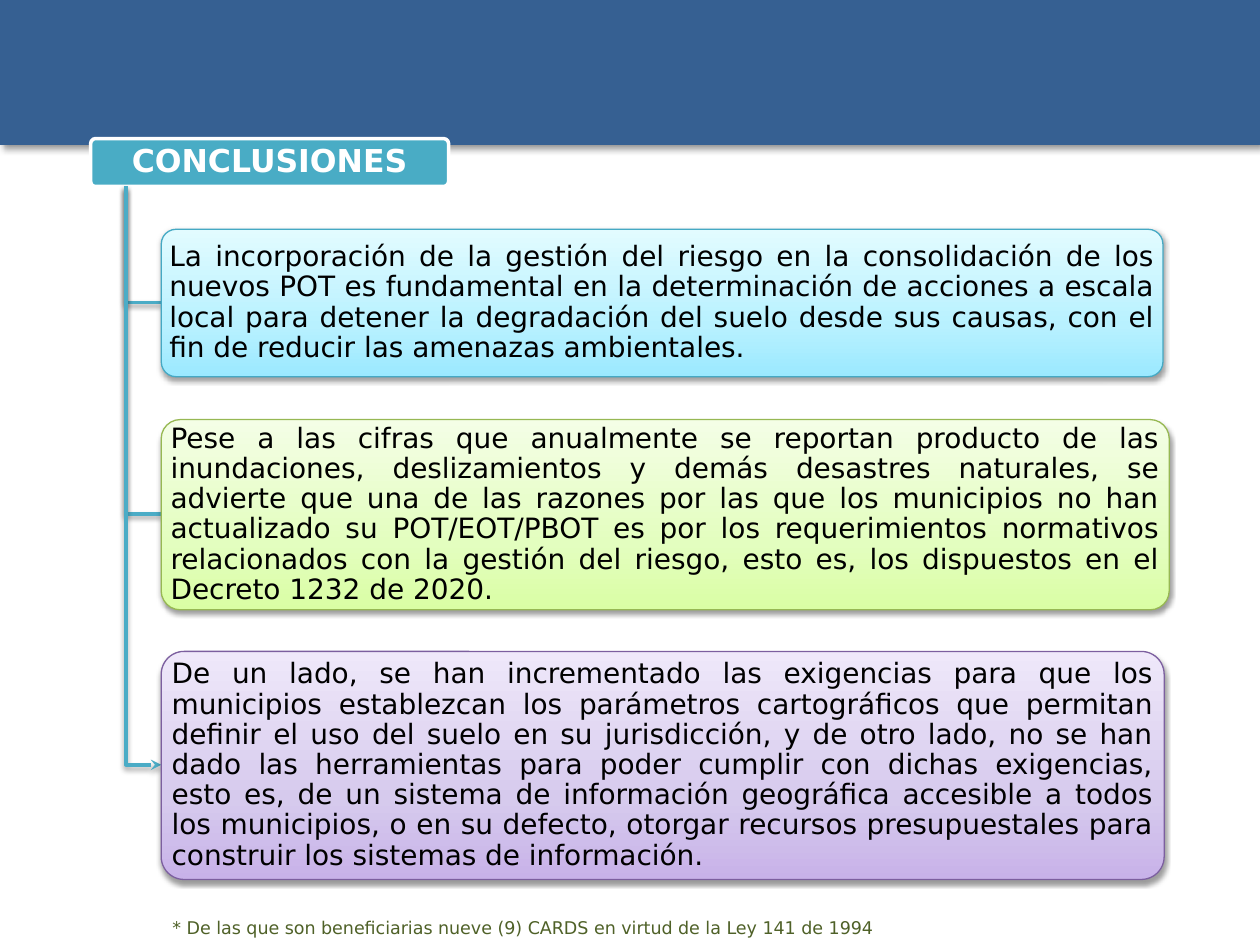
from copy import deepcopy
from dataclasses import dataclass

from lxml.etree import SubElement
from pptx import Presentation
from pptx.dml.color import RGBColor
from pptx.enum.shapes import MSO_SHAPE
from pptx.enum.text import MSO_ANCHOR, PP_ALIGN
from pptx.oxml.ns import qn
from pptx.shapes.base import BaseShape
from pptx.slide import Slide
from pptx.text.text import TextFrame
from pptx.util import Emu, Pt

EMU_PER_PX = 9144  # 100 px to the inch


def px(length: int) -> Emu:
    return Emu(length * EMU_PER_PX)


@dataclass(frozen=True)
class Theme:
    font: str = "DejaVu Sans"
    banner: str = "366092"
    heading: str = "49ACC5"
    branch: str = "4BACC6"
    white: str = "FFFFFF"
    black: str = "000000"
    footnote: str = "4F6128"
    heading_size: int = 18
    body_size: int = 16
    footnote_size: int = 10


@dataclass(frozen=True)
class Box:
    left: int
    top: int
    width: int
    height: int

    def emu(self) -> tuple[Emu, ...]:
        return px(self.left), px(self.top), px(self.width), px(self.height)


@dataclass(frozen=True)
class Shadow:
    opacity: int
    blur: float
    distance: float
    angle: int


@dataclass(frozen=True)
class Conclusion:
    box: Box
    gradient: tuple[str, str, str]
    outline: str
    text: str


THEME = Theme()
BANNER_SHADOW = Shadow(40, 4, 3, 45)
CARD_SHADOW = Shadow(38, 3.1, 1.6, 90)
GRADIENT_POSITIONS = (0, 0.35, 1)
HEADING = Box(72, 110, 284, 38)
TRUNK_X = 100
CARD_LEFT = 128

CONCLUSIONS = (
    Conclusion(
        Box(CARD_LEFT, 182, 795, 117), ("9BE9FF", "B8F1FF", "E2FBFF"), "45A9C4",
        "La incorporación de la gestión del riesgo en la consolidación de los nuevos POT "
        "es fundamental en la determinación de acciones a escala local para detener la "
        "degradación del suelo desde sus causas, con el fin de reducir las amenazas "
        "ambientales."),
    Conclusion(
        Box(CARD_LEFT, 333, 800, 151), ("DAFEA4", "E3FEBF", "F4FEE6"), "97B853",
        "Pese a las cifras que anualmente se reportan producto de las inundaciones, "
        "deslizamientos y demás desastres naturales, se advierte que una de las razones "
        "por las que los municipios no han actualizado su POT/EOT/PBOT es por los "
        "requerimientos normativos relacionados con la gestión del riesgo, esto es, los "
        "dispuestos en el Decreto 1232 de 2020."),
    Conclusion(
        Box(CARD_LEFT, 517, 796, 181), ("C8B2E9", "D6CAED", "EFE8FA"), "7C5F9F",
        "De un lado, se han incrementado las exigencias para que los municipios "
        "establezcan los parámetros cartográficos que permitan definir el uso del suelo "
        "en su jurisdicción, y de otro lado, no se han dado las herramientas para poder "
        "cumplir con dichas exigencias, esto es, de un sistema de información geográfica "
        "accesible a todos los municipios, o en su defecto, otorgar recursos "
        "presupuestales para construir los sistemas de información."),
)


def color(value: str) -> RGBColor:
    return RGBColor.from_string(value)


def set_shadow(shape: BaseShape, shadow: Shadow) -> None:
    shape.shadow.inherit = False
    effects = shape._element.spPr.find(qn("a:effectLst"))
    outer = SubElement(
        effects, qn("a:outerShdw"), blurRad=str(Pt(shadow.blur)),
        dist=str(Pt(shadow.distance)), dir=str(shadow.angle * 60000), rotWithShape="0")
    shade = SubElement(outer, qn("a:srgbClr"), val=THEME.black)
    SubElement(shade, qn("a:alpha"), val=str(shadow.opacity * 1000))


def set_gradient(shape: BaseShape, colors: tuple[str, str, str]) -> None:
    """Fill with three stops running from the bottom edge to the top."""
    shape.fill.gradient()
    shape.fill.gradient_angle = 90
    stop_list = shape._element.spPr.find(".//" + qn("a:gsLst"))
    stop_list.append(deepcopy(stop_list[0]))
    for stop, position, value in zip(shape.fill.gradient_stops, GRADIENT_POSITIONS, colors):
        stop.position = position
        stop.color.rgb = color(value)


def set_outline(shape: BaseShape, value: str, width: float) -> None:
    shape.line.color.rgb = color(value)
    shape.line.width = Pt(width)


def write(frame: TextFrame, text: str, size: int, value: str, alignment: PP_ALIGN,
          margins: tuple[int, int], spacing: float = 1, bold: bool = False) -> None:
    frame.word_wrap = True
    frame.margin_left = frame.margin_right = px(margins[0])
    frame.margin_top = frame.margin_bottom = px(margins[1])
    frame.text = text
    paragraph = frame.paragraphs[0]
    paragraph.alignment = alignment
    paragraph.line_spacing = spacing
    font = paragraph.runs[0].font
    font.name, font.size, font.bold = THEME.font, Pt(size), bold
    font.color.rgb = color(value)


def add_box(slide: Slide, kind: MSO_SHAPE, box: Box) -> BaseShape:
    shape = slide.shapes.add_shape(kind, *box.emu())
    shape.shadow.inherit = False
    if kind == MSO_SHAPE.ROUNDED_RECTANGLE:
        shape.adjustments[0] = 0.1
    shape.text_frame.vertical_anchor = MSO_ANCHOR.MIDDLE
    return shape


def add_banner(slide: Slide) -> None:
    banner = add_box(slide, MSO_SHAPE.RECTANGLE, Box(0, 0, 1000, 115))
    banner.fill.solid()
    banner.fill.fore_color.rgb = color(THEME.banner)
    banner.line.fill.background()
    set_shadow(banner, BANNER_SHADOW)


def add_heading(slide: Slide) -> None:
    heading = add_box(slide, MSO_SHAPE.ROUNDED_RECTANGLE, HEADING)
    heading.fill.solid()
    heading.fill.fore_color.rgb = color(THEME.heading)
    set_outline(heading, THEME.white, 2)
    write(heading.text_frame, "CONCLUSIONES", THEME.heading_size, THEME.white,
          PP_ALIGN.CENTER, (4, 2), 0.9, bold=True)


def add_branch(slide: Slide, box: Box, arrow: bool) -> None:
    """Draw the elbow from the heading to the middle of a card's left edge."""
    middle = box.top + box.height // 2
    builder = slide.shapes.build_freeform(TRUNK_X, HEADING.top + HEADING.height, EMU_PER_PX)
    builder.add_line_segments([(TRUNK_X, middle), (box.left, middle)], close=False)
    branch = builder.convert_to_shape()
    branch.fill.background()
    set_outline(branch, THEME.branch, 2)
    if arrow:
        SubElement(branch.line._get_or_add_ln(), qn("a:tailEnd"), type="stealth")
    set_shadow(branch, CARD_SHADOW)


def add_card(slide: Slide, conclusion: Conclusion) -> None:
    card = add_box(slide, MSO_SHAPE.ROUNDED_RECTANGLE, conclusion.box)
    set_gradient(card, conclusion.gradient)
    set_outline(card, conclusion.outline, 0.75)
    set_shadow(card, CARD_SHADOW)
    write(card.text_frame, conclusion.text, THEME.body_size, THEME.black,
          PP_ALIGN.JUSTIFY, (3, 2), 0.9)


def main() -> None:
    presentation = Presentation()
    presentation.slide_width, presentation.slide_height = px(1000), px(750)
    slide = presentation.slides.add_slide(presentation.slide_layouts[6])
    add_banner(slide)
    add_heading(slide)
    for conclusion in CONCLUSIONS:
        add_branch(slide, conclusion.box, arrow=conclusion is CONCLUSIONS[-1])
        add_card(slide, conclusion)
    footnote = slide.shapes.add_textbox(*Box(127, 723, 593, 27).emu())
    write(footnote.text_frame,
          "* De las que son beneficiarias nueve (9) CARDS en virtud de la Ley 141 de 1994",
          THEME.footnote_size, THEME.footnote, PP_ALIGN.LEFT, (10, 5))
    presentation.save("out.pptx")


if __name__ == "__main__":
    main()
